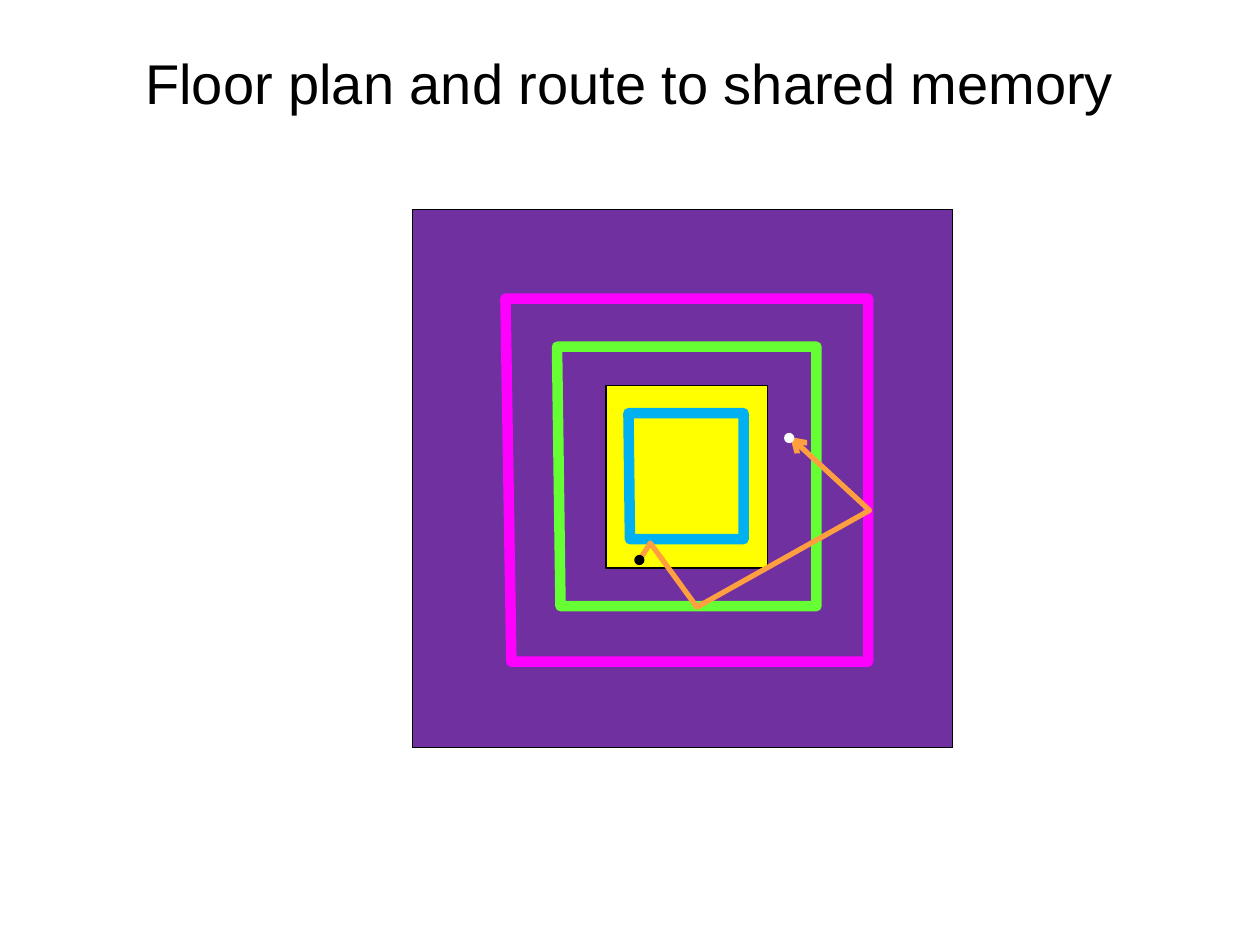
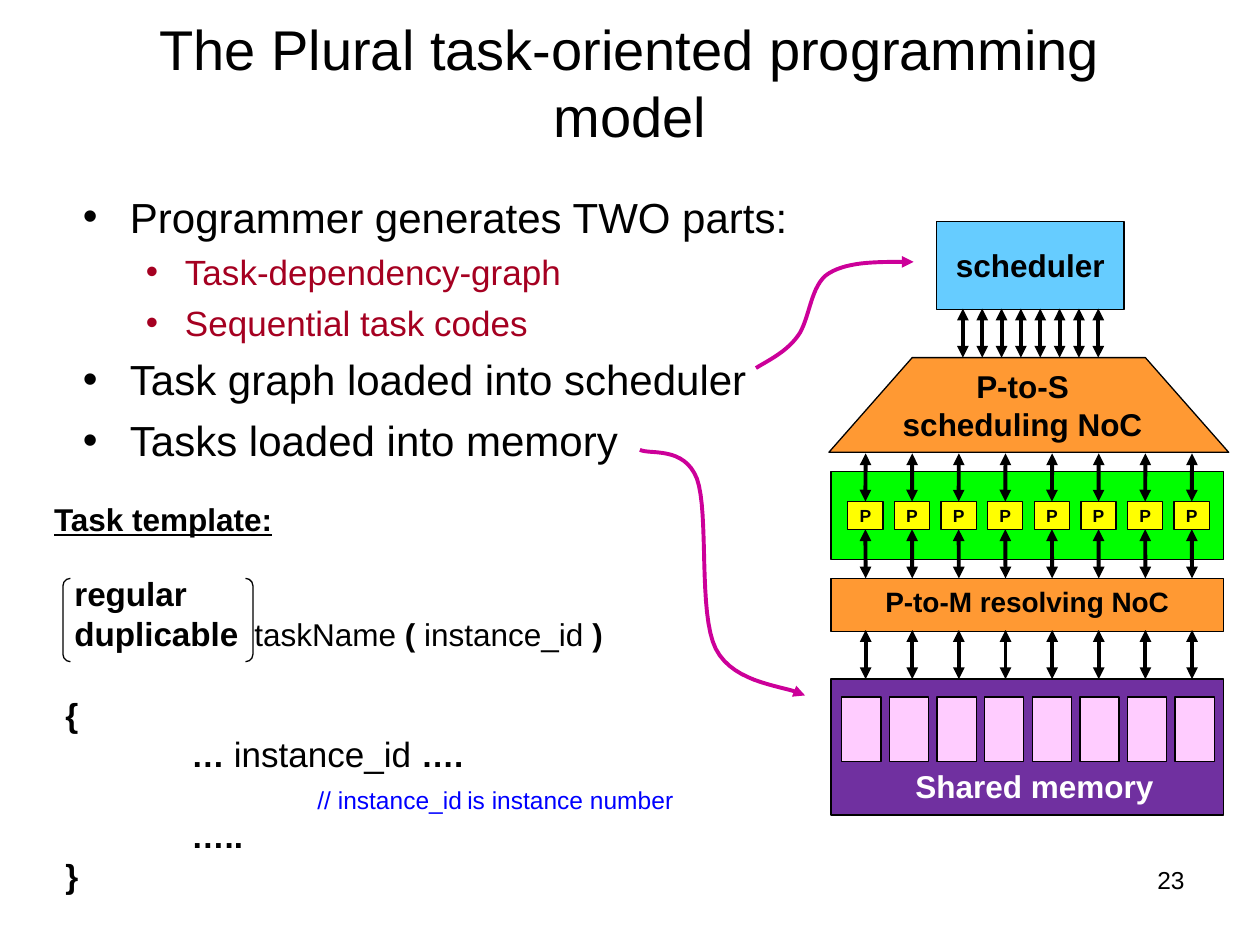
from dataclasses import dataclass
from typing import NamedTuple, Optional

from lxml import etree
from pptx import Presentation, util as u
from pptx.dml.color import RGBColor
from pptx.enum import shapes, text
from pptx.oxml import ns

BLACK = RGBColor(0x00, 0x00, 0x00)
WHITE = RGBColor(0xFF, 0xFF, 0xFF)
PURPLE = RGBColor(0x70, 0x30, 0xA0)
YELLOW = RGBColor(0xFF, 0xFF, 0x00)
SKY = RGBColor(0x00, 0xB0, 0xF0)
MAGENTA = RGBColor(0xFF, 0x00, 0xFF)
LIME = RGBColor(0x66, 0xFF, 0x33)
ROUTE_ORANGE = RGBColor(0xFF, 0x9F, 0x3F)
NOC_ORANGE = RGBColor(0xFF, 0x99, 0x33)
GREEN = RGBColor(0x00, 0xFF, 0x00)
SCHEDULER_BLUE = RGBColor(0x66, 0xCC, 0xFF)
PINK = RGBColor(0xFF, 0xCC, 0xFF)
LOADING_PINK = RGBColor(0xCC, 0x00, 0x99)
CRIMSON = RGBColor(0xA5, 0x00, 0x21)
COMMENT_BLUE = RGBColor(0x00, 0x00, 0xFF)

FONT = "Arial"
THIN = 0.75
LEFT, CENTER, RIGHT = text.PP_ALIGN.LEFT, text.PP_ALIGN.CENTER, text.PP_ALIGN.RIGHT
TOP, MIDDLE = text.MSO_ANCHOR.TOP, text.MSO_ANCHOR.MIDDLE
SHAPE = shapes.MSO_SHAPE
COLUMNS = 8

Point = tuple[float, float]


class Box(NamedTuple):
    """Left, top, width and height in centimetres."""
    left: float
    top: float
    width: float
    height: float

    def lengths(self) -> list[u.Length]:
        return [u.Cm(value) for value in self]


class Span(NamedTuple):
    text: str
    size: Optional[float] = None
    bold: Optional[bool] = None


@dataclass
class Line:
    """One paragraph; margin and first are indents in centimetres."""
    spans: list[Span]
    size: float
    color: RGBColor = BLACK
    bold: bool = False
    underline: bool = False
    align: text.PP_ALIGN = LEFT
    margin: float = 0
    first: float = 0
    before: float = 0
    spacing: Optional[float] = None
    bullet: bool = False
    tab: Optional[float] = None


@dataclass
class Ring:
    corners: list[Point]
    color: RGBColor


def label(words: str, size: float, **options) -> Line:
    return Line([Span(words)], size, **options)


def add_xml(parent, tag: str, **attributes: str):
    return etree.SubElement(parent, ns.qn(tag), attributes)


def write(shape, lines: list[Line], anchor=TOP, insets: Optional[Box] = None) -> None:
    """Fill a shape with lines; insets run left, top, right, bottom."""
    frame = shape.text_frame
    frame.word_wrap = True
    frame.vertical_anchor = anchor
    if insets:
        (frame.margin_left, frame.margin_top,
         frame.margin_right, frame.margin_bottom) = insets.lengths()
    for index, line in enumerate(lines):
        para = frame.add_paragraph() if index else frame.paragraphs[0]
        props = para._p.get_or_add_pPr()
        props.set("marL", str(u.Cm(line.margin)))
        props.set("indent", str(u.Cm(line.first)))
        if line.bullet:
            add_xml(props, "a:buFont", typeface=FONT)
            add_xml(props, "a:buChar", char="•")
        if line.tab:
            stops = add_xml(props, "a:tabLst")
            add_xml(stops, "a:tab", pos=str(u.Cm(line.tab)), algn="l")
        para.alignment = line.align
        para.space_before = u.Pt(line.before)
        if line.spacing:
            para.line_spacing = u.Pt(line.spacing)
        para.font.name = FONT
        para.font.size = u.Pt(line.size)
        para.font.bold = line.bold
        para.font.underline = line.underline
        para.font.color.rgb = line.color
        for span in line.spans:
            for part, words in enumerate(span.text.split("\n")):
                if part:
                    para.add_line_break()
                run = para.add_run()
                run.text = words
                if span.size:
                    run.font.size = u.Pt(span.size)
                if span.bold is not None:
                    run.font.bold = span.bold


def style(shape, fill: Optional[RGBColor], line: Optional[RGBColor], width: float) -> None:
    shape.shadow.inherit = False
    if fill is None:
        shape.fill.background()
    else:
        shape.fill.solid()
        shape.fill.fore_color.rgb = fill
    if line is None:
        shape.line.fill.background()
    else:
        shape.line.color.rgb = line
        shape.line.width = u.Pt(width)


def add_block(page, box: Box, fill: Optional[RGBColor], line: Optional[RGBColor] = BLACK,
              kind=SHAPE.RECTANGLE):
    shape = page.shapes.add_shape(kind, *box.lengths())
    style(shape, fill, line, THIN)
    return shape


def add_text(page, box: Box, lines: list[Line], **options) -> None:
    write(page.shapes.add_textbox(*box.lengths()), lines, **options)


def add_outline(page, points: list[Point], color: RGBColor, width: float,
                fill: Optional[RGBColor] = None, closed: bool = False, head: str = ""):
    """Draw a polyline with round joins and, if named, an arrowhead at its end."""
    start, *rest = [(u.Cm(x), u.Cm(y)) for x, y in points]
    builder = page.shapes.build_freeform(*start)
    builder.add_line_segments(rest, close=closed)
    shape = builder.convert_to_shape()
    style(shape, fill, color, width)
    stroke = shape.line._get_or_add_ln()
    add_xml(stroke, "a:round")
    if head:
        add_xml(stroke, "a:tailEnd", type=head)
    return shape


def curve(points: list[Point], steps: int = 16) -> list[Point]:
    """Sample a chain of cubic Bezier arcs that share their end points."""
    result = [points[0]]
    for index in range(0, len(points) - 1, 3):
        arc = points[index:index + 4]
        for step in range(1, steps + 1):
            t = step / steps
            weights = ((1 - t) ** 3, 3 * t * (1 - t) ** 2, 3 * t * t * (1 - t), t ** 3)
            result.append((sum(w * x for w, (x, _) in zip(weights, arc)),
                           sum(w * y for w, (_, y) in zip(weights, arc))))
    return result


def add_double_arrow(page, x: float, top: float, bottom: float):
    arrow = page.shapes.add_connector(shapes.MSO_CONNECTOR.STRAIGHT,
                                      u.Cm(x), u.Cm(top), u.Cm(x), u.Cm(bottom))
    arrow.line.color.rgb = BLACK
    arrow.line.width = u.Pt(2.25)
    stroke = arrow.line._get_or_add_ln()
    add_xml(stroke, "a:headEnd", type="triangle")
    add_xml(stroke, "a:tailEnd", type="triangle")
    add_xml(arrow._element.spPr, "a:effectLst")
    return arrow


def add_page(deck, title: str):
    page = deck.slides.add_slide(deck.slide_layouts[6])
    add_text(page, Box(1.27, 0.76, 22.86, 1.78), [label(title, 32, align=CENTER)],
             anchor=MIDDLE)
    return page


def draw_floor_plan(page) -> None:
    add_block(page, Box(8.31, 4.22, 10.9, 10.85), PURPLE)
    add_block(page, Box(12.22, 7.77, 3.25, 3.68), YELLOW)
    rings = [
        Ring([(12.67, 8.33), (14.99, 8.33), (14.99, 10.87), (12.7, 10.87)], SKY),
        Ring([(10.19, 6.02), (17.5, 6.02), (17.5, 13.34), (10.31, 13.34)], MAGENTA),
        Ring([(11.23, 6.99), (16.46, 6.99), (16.46, 12.22), (11.3, 12.22)], LIME),
    ]
    for ring in rings:
        add_outline(page, ring.corners, ring.color, 6, closed=True)
    route = [(12.93, 11.23), (13.11, 10.95), (14.05, 12.24), (17.53, 10.29), (15.93, 8.81)]
    add_outline(page, route, ROUTE_ORANGE, 3, head="arrow")
    for left, top, color in ((12.8, 11.2, BLACK), (15.82, 8.74, WHITE)):
        add_block(page, Box(left, top, 0.18, 0.18), color, color, SHAPE.OVAL)


def draw_bullets(page) -> None:
    main = dict(size=24, margin=0.95, first=-0.95, bullet=True)
    detail = dict(size=20, margin=2.06, first=-0.79, bullet=True, color=CRIMSON, before=5)
    add_text(page, Box(1.42, 3.73, 15.29, 5.87), [
        label("Programmer generates TWO parts:", **main),
        label("Task-dependency-graph", **detail),
        label("Sequential task codes", **detail),
        label("Task graph loaded into scheduler", before=6, **main),
        label("Tasks loaded into memory", before=6, **main),
    ])


def draw_task_template(page) -> None:
    code = dict(size=19, spacing=23)
    template = add_block(page, Box(1.07, 11.43, 13.84, 6.81), WHITE, None)
    write(template, [
        label("regular", bold=True, first=0.18, **code),
        Line([Span("duplicable\t", bold=True), Span("taskName", 18), Span(" ( ", 18, True),
              Span("instance_id ", 18), Span(")", 18, True)], first=0.18, tab=4.22, **code),
        label("{", bold=True, before=23, **code),
        Line([Span("… ", bold=True), Span("instance_id ", 20), Span("….", bold=True)],
             margin=2.54, **code),
        Line([Span("// instance_id"), Span(" ", 10.5), Span("is instance number")], 14,
             COMMENT_BLUE, margin=5.08, spacing=23),
        label("…..", bold=True, margin=2.54, **code),
        label("}", bold=True, **code),
    ])
    for left, kind in ((1.27, SHAPE.LEFT_BRACKET), (4.95, SHAPE.RIGHT_BRACKET)):
        bracket = add_block(page, Box(left, 11.66, 0.15, 1.68), None, kind=kind)
        bracket.adjustments[0] = 1
    add_text(page, Box(0.84, 9.96, 4.95, 1.02),
             [label("Task template:", 18, bold=True, underline=True)])


def draw_loading_arrows(page) -> None:
    to_scheduler = [(15.24, 7.42), (15.54, 7.24), (15.85, 7.09), (16.08, 6.78), (16.33, 6.45),
                    (16.33, 5.74), (16.71, 5.51), (17.12, 5.26), (17.75, 5.28), (18.42, 5.28)]
    to_memory = [(12.9, 9.07), (13.11, 9.17), (13.79, 8.99), (14.05, 9.65), (14.3, 10.34),
                 (14.07, 12.37), (14.43, 13.08), (14.81, 13.82), (15.88, 13.82), (16.23, 14.02)]
    for points in (to_scheduler, to_memory):
        add_outline(page, curve(points), LOADING_PINK, 2.25, head="triangle")


def draw_architecture(page) -> None:
    left, width = 16.75, 7.92
    bold = dict(bold=True, align=CENTER)
    add_block(page, Box(left, 9.5, width, 1.78), GREEN)
    add_block(page, Box(left, 13.69, width, 2.74), PURPLE)
    resolver = add_block(page, Box(left, 11.66, width, 1.07), NOC_ORANGE)
    write(resolver, [label("P-to-M resolving NoC", 16, **bold)])
    scheduler = add_block(page, Box(18.88, 4.46, 3.78, 1.78), SCHEDULER_BLUE)
    write(scheduler, [label("scheduler", 18, **bold)], anchor=MIDDLE)
    trapezoid = [(16.71, 9.12), (18.39, 7.21), (23.09, 7.21), (24.77, 9.12)]
    network = add_outline(page, trapezoid, BLACK, THIN, NOC_ORANGE, closed=True)
    write(network, [label("P-to-S\nscheduling NoC", 18, **bold)], anchor=MIDDLE,
          insets=Box(0, 0.13, 0.25, 0.13))

    for column in range(COLUMNS):
        x = 17.45 + 0.94 * column
        processor = add_block(page, Box(x - 0.36, 10.11, 0.71, 0.56), YELLOW)
        write(processor, [label("P", 10, **bold)], anchor=MIDDLE, insets=Box(0, 0, 0, 0))
        add_double_arrow(page, x, 9.14, 10.11).end_connect(processor, 0)
        add_double_arrow(page, x, 10.67, 11.66).begin_connect(processor, 2)
        add_double_arrow(page, x, 12.7, 13.69)
        add_double_arrow(page, 19.41 + 0.39 * column, 6.22, 7.21)
        add_block(page, Box(16.97 + 0.96 * column, 14.05, 0.79, 1.3), PINK)
    add_text(page, Box(17.73, 15.39, 6.25, 1.07),
             [label("Shared memory", 18, color=WHITE, **bold)],
             insets=Box(0.15, 0.08, 0.15, 0.08))


def main() -> None:
    deck = Presentation()
    deck.slide_width, deck.slide_height = u.Cm(25.4), u.Cm(19.05)
    draw_floor_plan(add_page(deck, "Floor plan and route to shared memory"))

    model = add_page(deck, "The Plural task-oriented programming model")
    add_text(model, Box(18.21, 17.32, 5.92, 1.32), [label("23", 14, align=RIGHT)])
    draw_bullets(model)
    draw_task_template(model)
    draw_loading_arrows(model)
    draw_architecture(model)
    deck.save("out.pptx")


if __name__ == "__main__":
    main()
